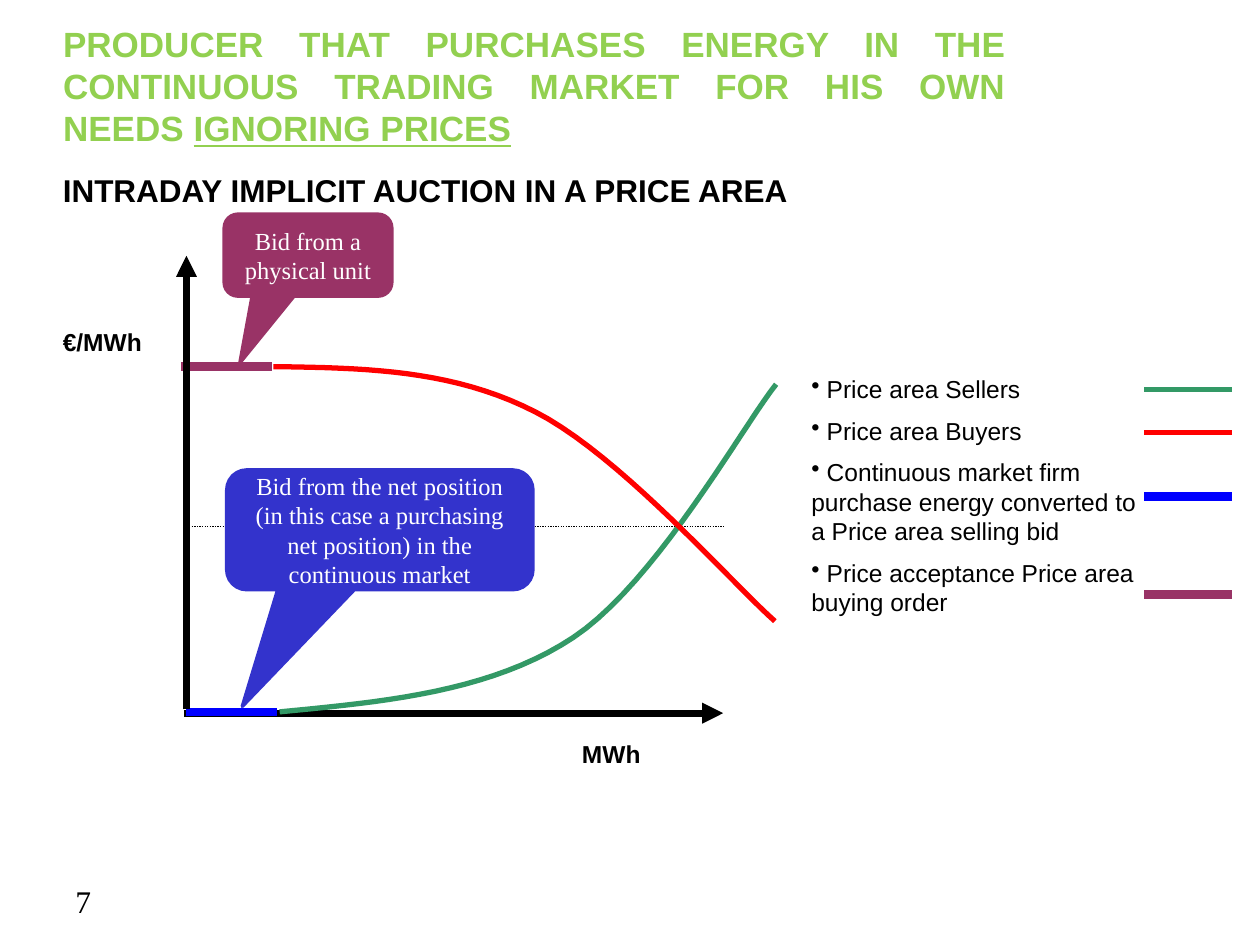
"""Build the slide on a producer buying energy in the continuous market, with its auction curves."""
import pptx
import pptx.dml.color
import pptx.enum.dml
import pptx.enum.shapes
import pptx.enum.text
import pptx.oxml.ns
import pptx.util
from lxml import etree
from pptx.util import Inches

ALIGN = pptx.enum.text.PP_ALIGN
ANCHOR = pptx.enum.text.MSO_ANCHOR
BLACK, WHITE, TITLE_GREEN = "000000", "FFFFFF", "92D050"
SELLER_GREEN, BUYER_RED = "339966", "FF0000"
NET_BLUE, CALLOUT_BLUE, UNIT_PURPLE = "0000FF", "3333CC", "993366"


def color(target, value):
    target.rgb = pptx.dml.color.RGBColor.from_string(value)


def format_text(paragraph, size, name, value, bold=False, alignment=ALIGN.LEFT):
    paragraph.alignment = alignment
    paragraph.font.size = pptx.util.Pt(size)
    paragraph.font.name = name
    paragraph.font.bold = bold
    color(paragraph.font.color, value)


presentation = pptx.Presentation()
presentation.slide_width = Inches(10)
presentation.slide_height = Inches(7.5)
slide = presentation.slides.add_slide(presentation.slide_layouts[5])
shapes = slide.shapes

title = shapes.title
title.left, title.top, title.width, title.height = map(Inches, (0.4, 0.37, 7.68, 0.62))
title.text_frame.auto_size = pptx.enum.text.MSO_AUTO_SIZE.NONE
title.text_frame.vertical_anchor = ANCHOR.MIDDLE
paragraph = title.text_frame.paragraphs[0]
paragraph.add_run().text = (
    "PRODUCER THAT PURCHASES ENERGY IN THE CONTINUOUS TRADING MARKET FOR HIS OWN NEEDS "
)
emphasis = paragraph.add_run()
emphasis.text = "IGNORING PRICES"
emphasis.font.underline = True
format_text(paragraph, 20, "Arial", TITLE_GREEN, True, ALIGN.JUSTIFY)

labels = [
    ("INTRADAY IMPLICIT AUCTION IN A PRICE AREA", 0.4, 1.31, 9.42, 0.4, 18, "Arial", True),
    ("€/MWh", 0.4, 2.55, 0.93, 0.33, 14, "Arial", True),
    ("MWh", 4.52, 5.82, 0.91, 0.33, 14, "Arial", True),
    ("7", 0.5, 6.95, 2.33, 0.4, 18, "Times New Roman", False),
]
for text, left, top, width, height, size, name, bold in labels:
    box = shapes.add_textbox(Inches(left), Inches(top), Inches(width), Inches(height))
    box.text_frame.word_wrap = True
    paragraph = box.text_frame.paragraphs[0]
    paragraph.text = text
    format_text(paragraph, size, name, BLACK, bold)

legend = [
    (" Price area Sellers", 3.09, SELLER_GREEN, 3),
    (" Price area Buyers", 3.43, BUYER_RED, 3),
    (" Continuous market firm purchase energy converted to a Price area selling bid",
     3.94, NET_BLUE, 5),
    (" Price acceptance Price area buying order", 4.72, UNIT_PURPLE, 5),
]
box = shapes.add_textbox(Inches(6.34), Inches(2.92), Inches(2.92), Inches(2.1))
box.text_frame.word_wrap = True
for index, (text, *_) in enumerate(legend):
    paragraph = box.text_frame.paragraphs[0] if index == 0 else box.text_frame.add_paragraph()
    paragraph.text = text
    if index:
        paragraph.space_before = pptx.util.Pt(7)
    properties = paragraph._p.get_or_add_pPr()
    etree.SubElement(properties, pptx.oxml.ns.qn("a:buChar"), char="•")
    format_text(paragraph, 14, "Arial", BLACK)

lines = [
    (1.46, 5.66, 5.74, 5.66, BLACK, 4, "arrow"),
    (1.44, 2.91, 2.16, 2.91, UNIT_PURPLE, 5, "solid"),
    (1.48, 5.65, 2.2, 5.65, NET_BLUE, 5, "solid"),
    (1.46, 4.18, 5.75, 4.18, BLACK, 0.75, "dotted"),
    (1.48, 5.63, 1.48, 2.03, BLACK, 4, "arrow"),
]
lines += [(9.08, y, 9.78, y, value, weight, "solid") for _, y, value, weight in legend]
for x1, y1, x2, y2, value, weight, style in lines:
    connector = shapes.add_connector(
        pptx.enum.shapes.MSO_CONNECTOR.STRAIGHT, Inches(x1), Inches(y1), Inches(x2), Inches(y2)
    )
    color(connector.line.color, value)
    connector.line.width = pptx.util.Pt(weight)
    if style == "dotted":
        connector.line.dash_style = pptx.enum.dml.MSO_LINE.ROUND_DOT
    properties = connector._element.spPr
    if style == "arrow":
        outline = properties.find(pptx.oxml.ns.qn("a:ln"))
        etree.SubElement(outline, pptx.oxml.ns.qn("a:tailEnd"), type="triangle")
    etree.SubElement(properties, pptx.oxml.ns.qn("a:effectLst"))

curves = [
    (SELLER_GREEN, [(2.22, 5.65), (3.06, 5.57), (3.9, 5.49), (4.55, 5.06),
                    (5.21, 4.62), (5.89, 3.39), (6.16, 3.05)]),
    (BUYER_RED, [(2.17, 2.91), (2.88, 2.92), (3.59, 2.93), (4.25, 3.27),
                 (4.92, 3.61), (5.83, 4.65), (6.15, 4.93)]),
]
steps = 20
for value, controls in curves:
    points = [tuple(map(Inches, controls[0]))]
    for first in (0, 3):
        segment = controls[first:first + 4]
        for step in range(1, steps + 1):
            t = step / steps
            weights = ((1 - t) ** 3, 3 * t * (1 - t) ** 2, 3 * t ** 2 * (1 - t), t ** 3)
            points.append(tuple(
                Inches(sum(weight * point[axis] for weight, point in zip(weights, segment)))
                for axis in (0, 1)
            ))
    builder = shapes.build_freeform(*points[0])
    builder.add_line_segments(points[1:], close=False)
    curve = builder.convert_to_shape()
    curve.shadow.inherit = False
    curve.fill.background()
    color(curve.line.color, value)
    curve.line.width = pptx.util.Pt(3)

callouts = [
    ("Bid from the net position (in this case a purchasing net position) in the continuous market",
     1.8, 3.73, 2.43, 0.95, CALLOUT_BLUE, (-0.449, 1.475, 0.167)),
    ("Bid from a physical unit", 1.78, 1.7, 1.33, 0.65, UNIT_PURPLE, (-0.406, 1.313, 0.167)),
]
for text, left, top, width, height, value, adjustments in callouts:
    callout = shapes.add_shape(
        pptx.enum.shapes.MSO_SHAPE.ROUNDED_RECTANGULAR_CALLOUT,
        Inches(left), Inches(top), Inches(width), Inches(height),
    )
    for index, adjustment in enumerate(adjustments):
        callout.adjustments[index] = adjustment
    callout.shadow.inherit = False
    callout.fill.solid()
    color(callout.fill.fore_color, value)
    color(callout.line.color, value)
    callout.line.width = pptx.util.Pt(2)
    callout.text_frame.word_wrap = True
    callout.text_frame.vertical_anchor = ANCHOR.MIDDLE
    paragraph = callout.text_frame.paragraphs[0]
    paragraph.text = text
    format_text(paragraph, 14, "Times New Roman", WHITE, alignment=ALIGN.CENTER)

presentation.save("out.pptx")
